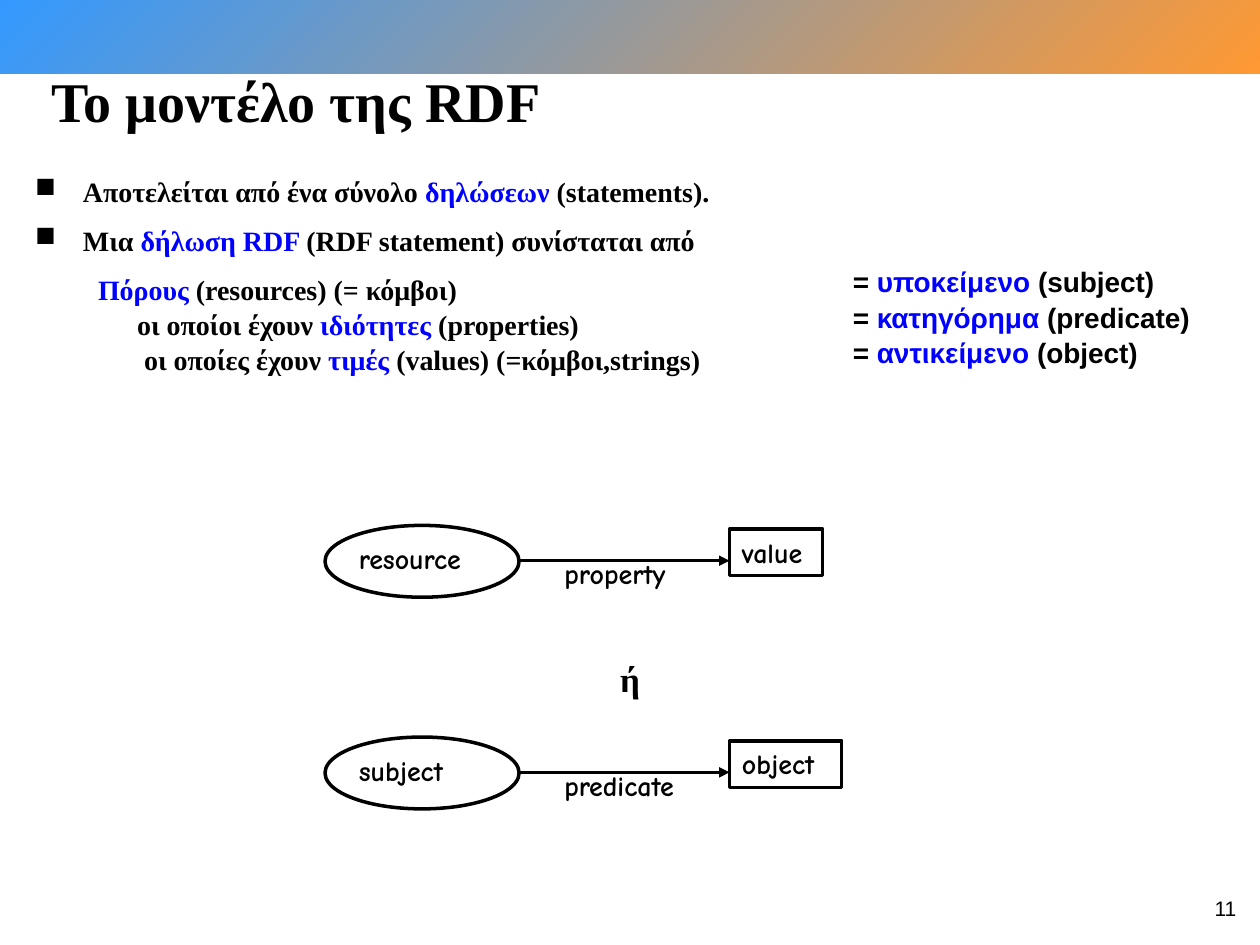
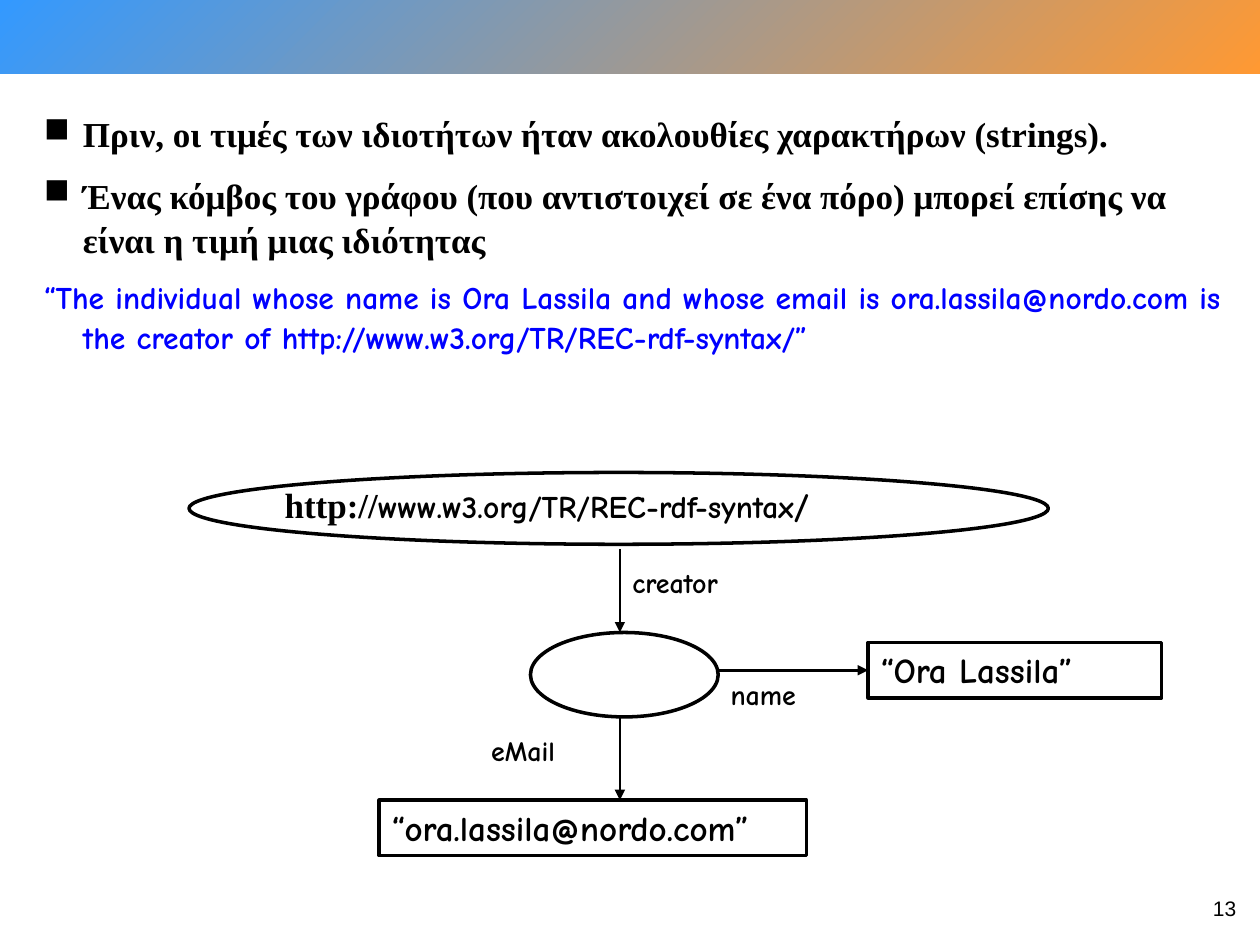
from copy import deepcopy
from dataclasses import dataclass, field
from typing import Optional

from lxml.etree import SubElement
from pptx import Presentation
from pptx.dml.color import RGBColor
from pptx.enum.shapes import MSO_CONNECTOR, MSO_SHAPE
from pptx.enum.text import MSO_ANCHOR, PP_ALIGN
from pptx.oxml.ns import qn
from pptx.util import Inches, Pt

COLORS = {
    "text": "000000",
    "accent": "0000FF",
    "band_start": "3399FF",
    "band_end": "FF9933",
}
SERIF, SANS, HAND = "Times New Roman", "Arial", "Comic Neue"
TITLE_ONLY, BLANK = 5, 6
LEFT = 1  # connection site


@dataclass
class Run:
    text: str
    size: float = 16
    font: str = SERIF
    color: str = "text"
    bold: bool = True


@dataclass
class Para:
    runs: list[Run]
    margin: float = 0
    indent: float = 0
    before: float = 0
    bullet: bool = False
    level: int = 0
    spacing: Optional[float] = None
    align: PP_ALIGN = PP_ALIGN.LEFT


@dataclass
class Node:
    shape: MSO_SHAPE
    left: float
    top: float
    width: float
    height: float
    runs: list[Run] = field(default_factory=list)


@dataclass
class Label:
    left: float
    top: float
    width: float
    height: float
    runs: list[Run]


def rgb(name: str) -> RGBColor:
    return RGBColor.from_string(COLORS[name])


def hand(text: str, size: float = 16) -> list[Run]:
    return [Run(text, size, HAND)]


def marked(text: str, size: float = 16, font: str = SERIF) -> list[Run]:
    """Split text at asterisks; every second piece takes the accent colour."""
    return [Run(piece, size, font, "accent" if i % 2 else "text")
            for i, piece in enumerate(text.split("*")) if piece]


def add_run(p, run: Run) -> None:
    for i, line in enumerate(run.text.split("\n")):
        if i:
            p.add_line_break()
            br = p._p.findall(qn("a:br"))[-1]
        r = p.add_run()
        r.text = line
        r.font.size = Pt(run.size)
        r.font.name = run.font
        r.font.bold = run.bold
        r.font.color.rgb = rgb(run.color)
        if i:
            br.append(deepcopy(r._r.rPr))


def write(tf, paras: list[Para], anchor: MSO_ANCHOR = MSO_ANCHOR.TOP) -> None:
    tf.word_wrap = True
    tf.vertical_anchor = anchor
    for i, para in enumerate(paras):
        p = tf.add_paragraph() if i else tf.paragraphs[0]
        p.level = para.level
        p.alignment = para.align
        p.space_before = Pt(para.before)
        if para.spacing:
            p.line_spacing = para.spacing
        pPr = p._p.get_or_add_pPr()
        pPr.set("marL", str(Inches(para.margin)))
        pPr.set("indent", str(Inches(para.indent)))
        if para.bullet:
            SubElement(pPr, qn("a:buChar"), char="■")
        else:
            SubElement(pPr, qn("a:buNone"))
        for run in para.runs:
            add_run(p, run)


def add_text(slide, left: float, top: float, width: float, height: float,
             paras: list[Para]) -> None:
    sp = slide.shapes.add_textbox(Inches(left), Inches(top), Inches(width), Inches(height))
    write(sp.text_frame, paras)


def add_label(slide, label: Label) -> None:
    add_text(slide, label.left, label.top, label.width, label.height, [Para(label.runs)])


def add_node(slide, node: Node):
    sp = slide.shapes.add_shape(node.shape, Inches(node.left), Inches(node.top),
                                Inches(node.width), Inches(node.height))
    sp.shadow.inherit = False
    sp.fill.background()
    sp.line.color.rgb = rgb("text")
    sp.line.width = Pt(2)
    if node.runs:
        write(sp.text_frame, [Para(node.runs)])
    return sp


def add_arrow(slide, x1: float, y1: float, x2: float, y2: float):
    cxn = slide.shapes.add_connector(MSO_CONNECTOR.STRAIGHT, Inches(x1), Inches(y1),
                                     Inches(x2), Inches(y2))
    cxn.line.color.rgb = rgb("text")
    cxn.line.width = Pt(1.5)
    SubElement(cxn.line._get_or_add_ln(), qn("a:tailEnd"), type="triangle")
    SubElement(cxn._element.spPr, qn("a:effectLst"))
    return cxn


def add_band(slide) -> None:
    sp = slide.shapes.add_shape(MSO_SHAPE.RECTANGLE, 0, 0, Inches(10), Inches(0.58))
    sp.shadow.inherit = False
    sp.line.fill.background()
    sp.fill.gradient()
    sp.fill.gradient_angle = 315
    for stop, name in zip(sp.fill.gradient_stops, ("band_start", "band_end")):
        stop.color.rgb = rgb(name)
    slide.shapes._spTree.insert(2, sp._element)


def new_slide(prs, number: int, title: str = ""):
    slide = prs.slides.add_slide(prs.slide_layouts[TITLE_ONLY if title else BLANK])
    for ph in list(slide.placeholders):
        if ph.placeholder_format.idx != 0:
            ph._element.getparent().remove(ph._element)
    add_band(slide)
    if title:
        sp = slide.shapes.title
        sp.left, sp.top = Inches(0.31), Inches(0.42)
        sp.width, sp.height = Inches(9.44), Inches(0.75)
        write(sp.text_frame, [Para([Run(title, 32)])], MSO_ANCHOR.MIDDLE)
    add_text(slide, 9.49, 7.06, 0.42, 0.4,
             [Para([Run(str(number), 12, SANS, bold=False)], align=PP_ALIGN.RIGHT)])
    return slide


def add_triple(slide, top: float, start: str, link: str, end: str, end_width: float) -> None:
    """Draw an ellipse, a labelled arrow and a rectangle in one row."""
    add_arrow(slide, 4.12, top + 0.28, 5.79, top + 0.28)
    add_node(slide, Node(MSO_SHAPE.RECTANGLE, 5.79, top + 0.03, end_width, 0.37, hand(end)))
    add_node(slide, Node(MSO_SHAPE.OVAL, 2.58, top, 1.54, 0.57))
    add_label(slide, Label(4.38, top + 0.2, 1.22, 0.37, hand(link)))
    add_label(slide, Label(2.75, top + 0.08, 1.37, 0.37, hand(start)))


def build_model_slide(prs) -> None:
    slide = new_slide(prs, 11, "Το μοντέλο της RDF")
    bullets = [
        Para(marked(text), 0.38, -0.38, 8, bullet=True, spacing=1.05)
        for text in ("Αποτελείται από ένα σύνολο *δηλώσεων* (statements).",
                     "Μια *δήλωση RDF *(RDF statement) συνίσταται από")
    ]
    parts = marked("*Πόρους *(resources) (= κόμβοι)\n"
                   "οι οποίοι έχουν *ιδιότητες* (properties)\n"
                   " οι οποίες έχουν* τιμές *(values) (=κόμβοι,strings)")
    add_text(slide, 0.18, 1.32, 6.91, 2,
             bullets + [Para(parts, 0.81, -0.31, 8, level=1, spacing=1.05)])
    roles = marked("= *υποκείμενο *(subject)\n= *κατηγόρημα* (predicate)\n"
                   "= *αντικείμενο* (object)", font=SANS)
    add_text(slide, 6.67, 2.04, 3.33, 1.45, [Para(roles, before=8, spacing=1.05)])
    add_triple(slide, 4.17, "resource", "property", "value", 0.74)
    add_triple(slide, 5.85, "subject", "predicate", "object", 0.89)
    add_text(slide, 4.5, 5.17, 1, 0.44, [Para([Run("ή", 20)], align=PP_ALIGN.CENTER)])


def build_graph_slide(prs) -> None:
    slide = new_slide(prs, 13)
    bullets = [
        Para([Run(text, 20)], 0.31, -0.31, 10, bullet=True, spacing=1.05)
        for text in ("Πριν, οι τιμές των ιδιοτήτων ήταν ακολουθίες χαρακτήρων (strings).",
                     "Ένας κόμβος του γράφου (που αντιστοιχεί σε ένα πόρο) μπορεί επίσης "
                     "να είναι η τιμή μιας ιδιότητας")
    ]
    sentence = Run("“The individual whose name is Ora Lassila and whose email is "
                   "ora.lassila@nordo.com is the creator of "
                   "http://www.w3.org/TR/REC-rdf-syntax/”", 18, HAND, "accent")
    add_text(slide, 0.25, 0.83, 9.75, 3.05,
             bullets + [Para([sentence], 0.31, -0.31, 9, spacing=1.05)])

    add_node(slide, Node(MSO_SHAPE.OVAL, 1.5, 3.75, 6.82, 0.57))
    add_node(slide, Node(MSO_SHAPE.OVAL, 4.21, 5.02, 1.49, 0.67))
    name_box = add_node(slide, Node(MSO_SHAPE.RECTANGLE, 6.89, 5.1, 2.33, 0.44,
                                    hand("“Ora Lassila”", 20)))
    add_node(slide, Node(MSO_SHAPE.RECTANGLE, 3.01, 6.35, 3.39, 0.44,
                         hand("“ora.lassila@nordo.com”", 20)))

    add_arrow(slide, 4.92, 4.36, 4.92, 5.02)
    add_arrow(slide, 4.92, 5.68, 4.92, 6.35)
    name_arrow = add_arrow(slide, 5.7, 5.32, 6.89, 5.32)
    name_arrow.end_connect(name_box, LEFT)

    address = [Run("http://", 20), *hand("www.w3.org/TR/REC-rdf-syntax", 18), *hand("/", 20)]
    for label in (
        Label(2.16, 3.79, 6.45, 0.44, address),
        Label(4.92, 4.44, 1.03, 0.37, hand("creator")),
        Label(3.8, 5.77, 0.79, 0.37, hand("eMail")),
        Label(5.7, 5.33, 0.74, 0.37, hand("name")),
    ):
        add_label(slide, label)


def main() -> None:
    prs = Presentation()
    prs.slide_width, prs.slide_height = Inches(10), Inches(7.5)
    build_model_slide(prs)
    build_graph_slide(prs)
    prs.save("out.pptx")


if __name__ == "__main__":
    main()
